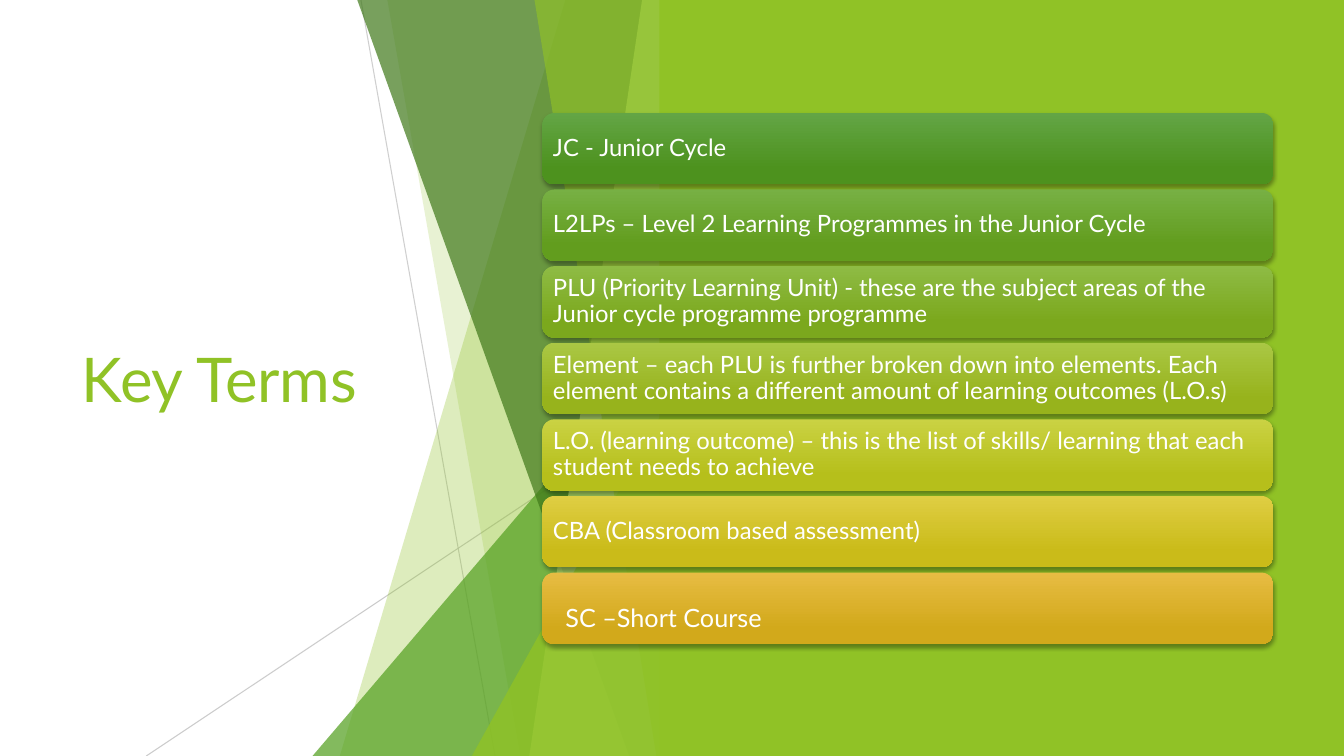
"""Build the Key Terms slide: a title, glass shards and a stack of term bars."""
import dataclasses
import typing

import lxml.etree
import pptx
import pptx.dml.color
import pptx.enum.shapes
import pptx.enum.text
import pptx.oxml.ns
import pptx.util

Inches = pptx.util.Inches
Kind = pptx.enum.shapes.MSO_SHAPE
Anchor = pptx.enum.text.MSO_ANCHOR


@dataclasses.dataclass(frozen=True)
class Theme:
    font: str = "Lato"
    lime: str = "90C226"
    leaf: str = "54A021"
    moss: str = "3F7819"
    pale: str = "C0E474"
    gray: str = "BFBFBF"
    white: str = "FFFFFF"
    black: str = "000000"
    head: float = 44
    term: float = 17
    last: float = 18


THEME = Theme()
WIDE, HIGH = 13.33, 7.5
EDGE = 6.66
BAND = 6.54
BAR_LEFT, BAR_TOP, BAR_WIDE, BAR_HIGH, BAR_STEP = 5.38, 1.12, 7.25, 0.71, 0.76


class Ray(typing.NamedTuple):
    start: tuple[float, float]
    end: tuple[float, float]
    alpha: int


class Shard(typing.NamedTuple):
    top: float
    foot: float
    color: str
    alpha: int


class Spike(typing.NamedTuple):
    left: float
    top: float
    color: str
    alpha: int


class Bar(typing.NamedTuple):
    text: str
    light: str
    deep: str


RAYS = [Ray((3.58, 0), (4.91, HIGH), 75), Ray((EDGE, 4.03), (1.45, HIGH), 80)]
GLASS = [
    Shard(5.61, 3.37, THEME.lime, 30),
    Shard(3.84, 5.16, THEME.lime, 20),
    Spike(3.1, 3.33, THEME.leaf, 72),
    Shard(3.54, 6.24, THEME.moss, 70),
    Shard(6.37, 5.25, THEME.pale, 70),
    Shard(5.3, 6.51, THEME.lime, 65),
    Spike(4.68, 3.93, THEME.lime, 80),
]
BARS = [
    Bar("JC - Junior Cycle", "63A545", "4D921E"),
    Bar("L2LPs – Level 2 Learning Programmes in the Junior Cycle", "77B044", "629D1E"),
    Bar("PLU (Priority Learning Unit) - these are the subject areas of the "
        "Junior cycle programme programme", "8EBB44", "7BA81D"),
    Bar("Element – each PLU is further broken down into elements. Each element "
        "contains a different amount of learning outcomes (L.O.s)", "AAC744", "97B31C"),
    Bar("L.O. (learning outcome) – this is the list of skills/ learning that each "
        "student needs to achieve", "CAD243", "B6BF1B"),
    Bar("CBA (Classroom based assessment)", "DFCE43", "CABB19"),
    Bar("", "E7BC43", "D2A91B"),
]


def rgb(code: str) -> pptx.dml.color.RGBColor:
    return pptx.dml.color.RGBColor.from_string(code)


def node(root, tag: str, **attrs):
    return lxml.etree.SubElement(root, pptx.oxml.ns.qn(tag), attrs)


def fade(shape, alpha: int) -> None:
    for color in shape.element.spPr.iter(pptx.oxml.ns.qn("a:srgbClr")):
        node(color, "a:alpha", val=str(alpha * 1000))


def paint(shape, color: str, alpha: int = 100) -> None:
    shape.shadow.inherit = False
    shape.fill.solid()
    shape.fill.fore_color.rgb = rgb(color)
    shape.line.fill.background()
    if alpha < 100:
        fade(shape, alpha)


def write(frame, text: str, size: float, color: str):
    frame.word_wrap = True
    line = frame.paragraphs[0]
    line.alignment = pptx.enum.text.PP_ALIGN.LEFT
    run = line.add_run()
    run.text = text
    run.font.name = THEME.font
    run.font.size = pptx.util.Pt(size)
    run.font.color.rgb = rgb(color)
    return line


def draw_title(slide) -> None:
    title = slide.shapes.title
    title.left, title.top = Inches(0.71), Inches(1.51)
    title.width, title.height = Inches(3.88), Inches(4.48)
    title.text_frame.vertical_anchor = Anchor.MIDDLE
    write(title.text_frame, "Key Terms", THEME.head, THEME.lime)


def draw_ray(slide, ray: Ray) -> None:
    line = slide.shapes.add_connector(
        pptx.enum.shapes.MSO_CONNECTOR.STRAIGHT,
        *map(Inches, ray.start + ray.end))
    line.line.color.rgb = rgb(THEME.gray)
    line.line.width = pptx.util.Pt(0.75)
    fade(line, ray.alpha)
    node(line.element.spPr, "a:effectLst")


def draw_shard(slide, shard: Shard) -> None:
    roof = -0.01
    points = [(EDGE, roof), (EDGE, HIGH), (shard.foot, HIGH)]
    path = slide.shapes.build_freeform(Inches(shard.top), Inches(roof))
    path.add_line_segments([(Inches(x), Inches(y)) for x, y in points], close=True)
    paint(path.convert_to_shape(), shard.color, shard.alpha)


def draw_spike(slide, spike: Spike) -> None:
    shape = slide.shapes.add_shape(
        Kind.ISOSCELES_TRIANGLE, Inches(spike.left), Inches(spike.top),
        Inches(EDGE - spike.left), Inches(HIGH - spike.top))
    shape.adjustments[0] = 1
    paint(shape, spike.color, spike.alpha)


def draw_bar(slide, bar: Bar, top: float) -> None:
    shape = slide.shapes.add_shape(
        Kind.ROUNDED_RECTANGLE, Inches(BAR_LEFT), Inches(top),
        Inches(BAR_WIDE), Inches(BAR_HIGH))
    shape.fill.gradient()
    shape.fill.gradient_angle = 270
    for stop, color, place in zip(shape.fill.gradient_stops, bar[1:], (0, 0.78)):
        stop.color.rgb = rgb(color)
        stop.position = place
    shape.line.fill.background()
    shape.shadow.inherit = False
    glow = node(shape.element.spPr.find(pptx.oxml.ns.qn("a:effectLst")), "a:outerShdw",
                blurRad=str(pptx.util.Pt(3)), dist=str(pptx.util.Pt(2)),
                dir="5400000", rotWithShape="0")
    shade = node(glow, "a:srgbClr", val=THEME.black)
    node(shade, "a:alpha", val="35000")
    if bar.text:
        frame = shape.text_frame
        frame.vertical_anchor = Anchor.MIDDLE
        frame.margin_left = frame.margin_right = Inches(0.07)
        frame.margin_top = frame.margin_bottom = Inches(0.07)
        write(frame, bar.text, THEME.term, THEME.white).line_spacing = 0.9


def main() -> None:
    deck = pptx.Presentation()
    deck.slide_width, deck.slide_height = Inches(WIDE), Inches(HIGH)
    slide = deck.slides.add_slide(deck.slide_layouts[5])
    draw_title(slide)
    for ray in RAYS:
        draw_ray(slide, ray)
    for part in GLASS:
        if isinstance(part, Shard):
            draw_shard(slide, part)
        else:
            draw_spike(slide, part)
    band = slide.shapes.add_shape(
        Kind.RECTANGLE, Inches(BAND), 0, Inches(WIDE - BAND), Inches(HIGH))
    paint(band, THEME.lime)
    for i, bar in enumerate(BARS):
        draw_bar(slide, bar, BAR_TOP + i * BAR_STEP)
    note = slide.shapes.add_textbox(
        Inches(5.51), Inches(5.93), Inches(6.26), Inches(0.4))
    write(note.text_frame, "SC –Short Course", THEME.last, THEME.white)
    deck.save("out.pptx")


if __name__ == "__main__":
    main()
